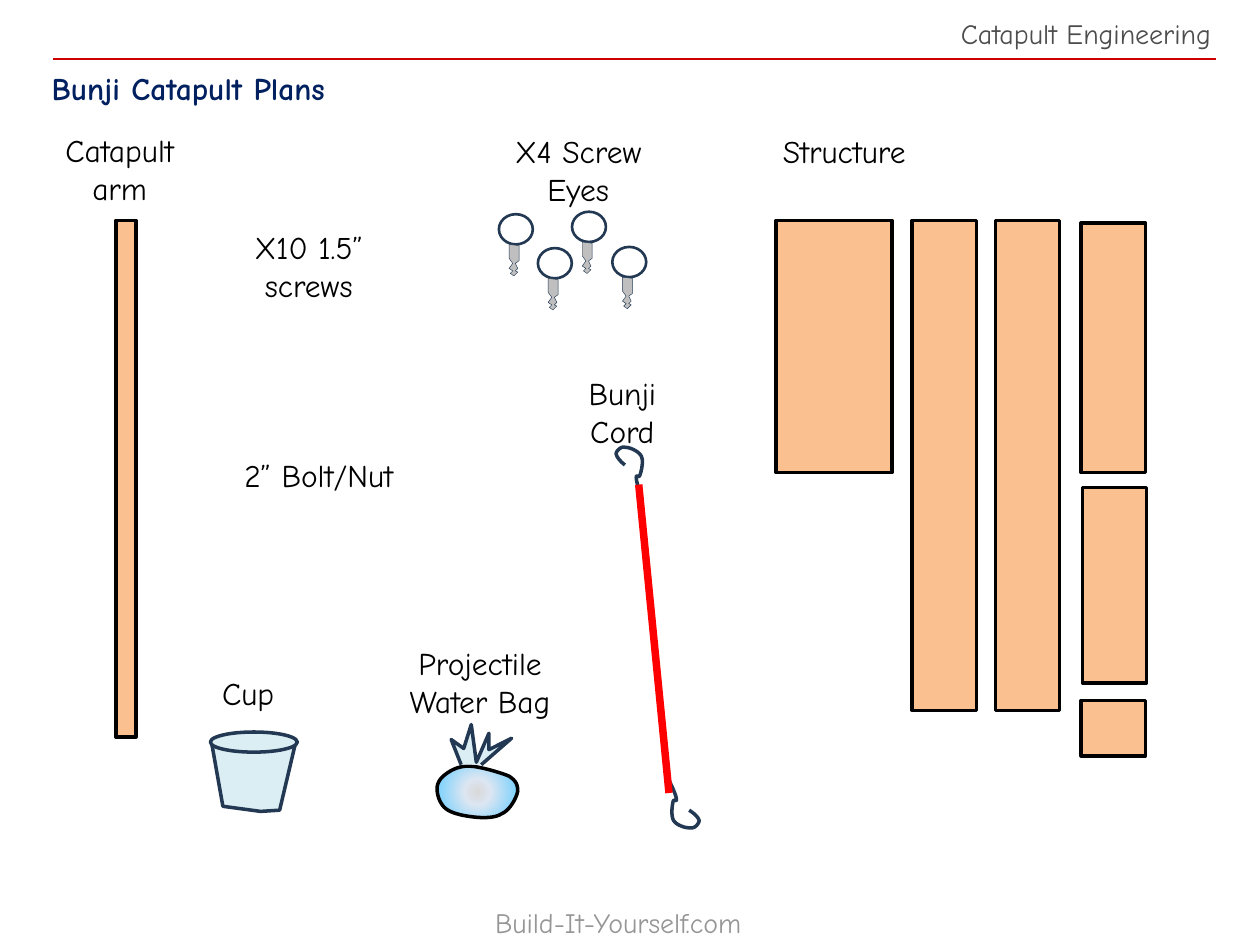
import math

from lxml import etree
from pptx import Presentation
from pptx.dml.color import RGBColor
from pptx.enum import shapes, text
from pptx.oxml import parse_xml
from pptx.oxml.ns import nsdecls, qn
from pptx.util import Pt

FONT = "Comic Neue"
WOOD, INK, NAVY, ICE = "FAC090", "000000", "233953", "DBEEF4"
LEFT, CENTER, RIGHT = text.PP_ALIGN.LEFT, text.PP_ALIGN.CENTER, text.PP_ALIGN.RIGHT
RECT, OVAL = shapes.MSO_SHAPE.RECTANGLE, shapes.MSO_SHAPE.OVAL

# Lines of each label, then left, top, width, height
LABELS = [
    (["Catapult arm"], 18, 71.3, 100.8, 72.7),
    (["X10 1.5” screws"], 113.8, 126.7, 125.3, 51.1),
    (["2” Bolt/Nut"], 119.5, 257, 125.3, 28.8),
    (["Cup"], 94.3, 381.6, 95, 28.8),
    (["Projectile", "Water Bag"], 211.7, 364.3, 125.3, 51.1),
    (["X4 Screw", "Eyes"], 267.8, 72, 125.3, 72.7),
    (["Bunji", "Cord"], 293, 210.2, 125.3, 72.7),
    (["Structure"], 419.8, 72, 125.3, 51.1),
]

ARM = (66.2, 126, 11.5, 295.2)
BOARDS = [
    (443.5, 126, 66.2, 144),
    (521.3, 126, 36.7, 280),
    (568.8, 126, 36.7, 280),
    (617.8, 127.4, 36.7, 142.6),
    (618.5, 278.6, 36.7, 111.6),
    (617.8, 400.3, 36.7, 31.7),
]

SCREW_EYES = [(285.1, 122.4), (326.9, 121), (307.4, 141.8), (349.9, 141.1)]
SHANK = [(5.8, 17.3), (5.8, 25.2), (7.9, 28.1), (5.8, 31), (7.9, 32.4),
         (6.5, 33.8), (8.6, 35.3), (10.8, 33.1), (9.4, 32.4), (10.8, 31),
         (9.4, 28.1), (11.5, 26.6), (11.5, 18)]

CUP_SIDE = [(121, 424.8), (127.4, 460.8), (149, 463.7), (159.8, 463), (168.5, 426.2)]
CUP_RIM = (120.2, 418.3, 49.7, 11.5)

BAG_TIE = [(263.5, 437), (257.8, 422.6), (265, 427.7), (269.3, 414), (272.2, 435.6),
           (279.4, 419), (279.4, 428.4), (292.3, 421.9), (275, 437)]
# Curves: a start point, then three points for each Bézier segment
BAG = [(254.9, 462.2),
       (257.8, 464.4), (262.8, 465.8), (268.6, 466.6),
       (273.6, 467.3), (282.2, 468), (286.6, 465.1),
       (291.6, 463), (295.2, 455.8), (295.9, 452.2),
       (295.9, 448.6), (295.2, 446.4), (290.9, 443.5),
       (285.8, 441.4), (273.6, 437.8), (267.8, 437.8),
       (261.4, 437.8), (257, 440.6), (254.2, 442.8),
       (251.3, 445), (249.8, 447.8), (249.8, 450.7),
       (249.8, 454.3), (251.3, 459.4), (254.9, 462.2)]
BAG_GLOW = [(0, "D9D9D9"), (28, "DCE6F2"), (97, "66CCFF")]

HOOK = [(0, 0),
        (-2.9, -2.2), (-5, -5), (-5, -6.5),
        (-5, -7.9), (-2.2, -10.8), (0, -10.1),
        (2.9, -10.1), (7.9, -7.9), (9.4, -5),
        (10.8, -2.2), (9.4, 3.6), (8.6, 5.8),
        (7.9, 7.9), (6.5, 5), (6.5, 7.2),
        (6.5, 9.4), (7.9, 13.7), (9.4, 18)]
HOOK_PLACES = [(357.1, 265.7, 0), (393.8, 463, 173.6)]  # x, y, turn
CORD = (371.5, 276.5, 4.3, 177.1)

deck = Presentation()
deck.slide_width, deck.slide_height = Pt(720), Pt(540)
page = deck.slides.add_slide(deck.slide_layouts[5])


def color(value):
    return RGBColor.from_string(value)


def paint(shape, fill=None, line=None, width=2):
    shape.shadow.inherit = False
    if fill:
        shape.fill.solid()
        shape.fill.fore_color.rgb = color(fill)
    else:
        shape.fill.background()
    if line:
        shape.line.color.rgb = color(line)
        shape.line.width = Pt(width)
    else:
        shape.line.fill.background()
    return shape


def preset(kind, place, **look):
    return paint(page.shapes.add_shape(kind, *map(Pt, place)), **look)


def outline(points, close=False, **look):
    corners = [(Pt(x), Pt(y)) for x, y in points]
    builder = page.shapes.build_freeform(*corners[0], scale=1)
    builder.add_line_segments(corners[1:], close=close)
    return paint(builder.convert_to_shape(), **look)


def curve(points, steps=10):
    """Return points along a chain of cubic Bézier segments."""
    result = [points[0]]
    for first in range(0, len(points) - 1, 3):
        segment = points[first:first + 4]
        for step in range(1, steps + 1):
            t = step / steps
            weights = [math.comb(3, k) * t**k * (1 - t)**(3 - k) for k in range(4)]
            result.append(tuple(sum(w * p[axis] for w, p in zip(weights, segment))
                                for axis in (0, 1)))
    return result


def place_points(points, x, y, turn=0):
    """Turn points about their own zero, in degrees, and move them to x, y."""
    c, s = math.cos(math.radians(turn)), math.sin(math.radians(turn))
    return [(x + px * c - py * s, y + px * s + py * c) for px, py in points]


def glow(shape, stops):
    """Fill a shape with a gradient that spreads from its centre."""
    shape.fill.gradient()
    old = shape._element.spPr.find(qn("a:gradFill"))
    marks = "".join(f'<a:gs pos="{at * 1000}"><a:srgbClr val="{value}"/></a:gs>'
                    for at, value in stops)
    new = parse_xml(
        f'<a:gradFill {nsdecls("a")} rotWithShape="1"><a:gsLst>{marks}</a:gsLst>'
        '<a:path path="circle"><a:fillToRect l="50000" t="50000" r="50000" b="50000"/>'
        '</a:path></a:gradFill>')
    old.getparent().replace(old, new)


def write(lines, place, box=None, size=18, ink=INK, align=CENTER, bold=False,
          wrap=True, fit=text.MSO_AUTO_SIZE.SHAPE_TO_FIT_TEXT):
    places = [Pt(value) for value in place]
    box = box or page.shapes.add_textbox(*places)
    box.left, box.top, box.width, box.height = places
    frame = box.text_frame
    frame.word_wrap, frame.auto_size = wrap, fit
    frame.vertical_anchor = text.MSO_ANCHOR.TOP
    for number, line in enumerate(lines):
        para = frame.add_paragraph() if number else frame.paragraphs[0]
        para.alignment = align
        span = para.add_run()
        span.text = line
        span.font.name, span.font.size, span.font.bold = FONT, Pt(size), bold
        span.font.color.rgb = color(ink)


# Heading, rule and footer
write(["Bunji Catapult Plans"], (22.3, 36, 429.1, 20.2), box=page.shapes.title,
      ink="002060", align=LEFT, bold=True, fit=text.MSO_AUTO_SIZE.NONE)
write(["Catapult Engineering"], (529.9, 5.8, 169.2, 26.6), size=16, ink="4D4D4D",
      align=RIGHT, wrap=False)
write(["Build-It-Yourself.com"], (275.8, 514.1, 177.1, 26.6), size=16, ink="969696",
      align=LEFT, wrap=False)
rule = page.shapes.add_connector(shapes.MSO_CONNECTOR.STRAIGHT,
                                 Pt(694.8), Pt(33.8), Pt(30.2), Pt(33.8))
rule.line.color.rgb = color("CC0000")
rule.line.width = Pt(1.5)
etree.SubElement(rule._element.spPr, qn("a:effectLst"))

# Parts of the catapult
for board in [ARM, *BOARDS]:
    preset(RECT, board, fill=WOOD, line=INK)

for lines, *place in LABELS:
    write(lines, place)

for x, y in SCREW_EYES:
    preset(OVAL, (x, y, 19.4, 17.3), line=NAVY, width=1.5)
    outline(place_points(SHANK, x, y), close=True, fill="BFBFBF", line=NAVY, width=0.25)

outline(CUP_SIDE, fill=ICE, line=NAVY)
preset(OVAL, CUP_RIM, fill=ICE, line=NAVY)

glow(outline(curve(BAG), close=True, line=INK), BAG_GLOW)
outline(BAG_TIE, fill=ICE, line=NAVY)

for x, y, turn in HOOK_PLACES:
    outline(place_points(curve(HOOK), x, y, turn), line=NAVY)
preset(RECT, CORD, fill="FF0000").rotation = 354.4

deck.save("out.pptx")
